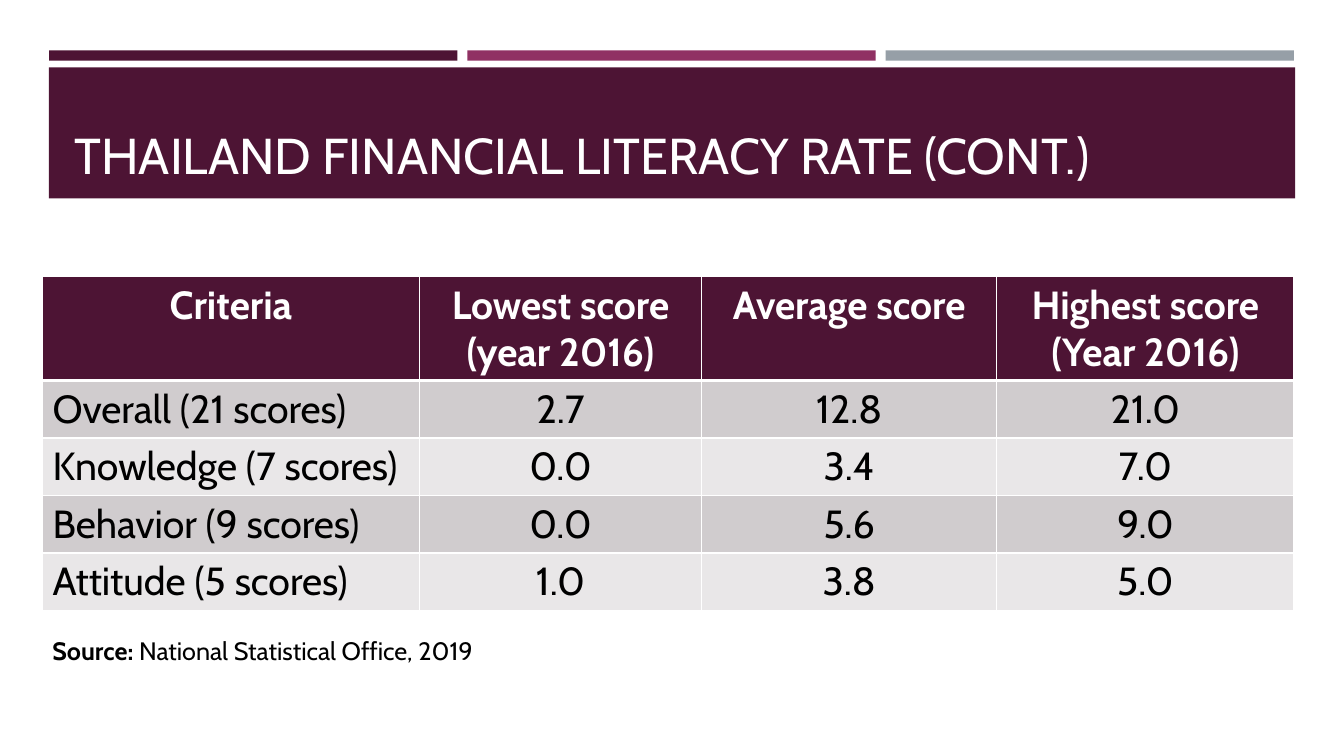
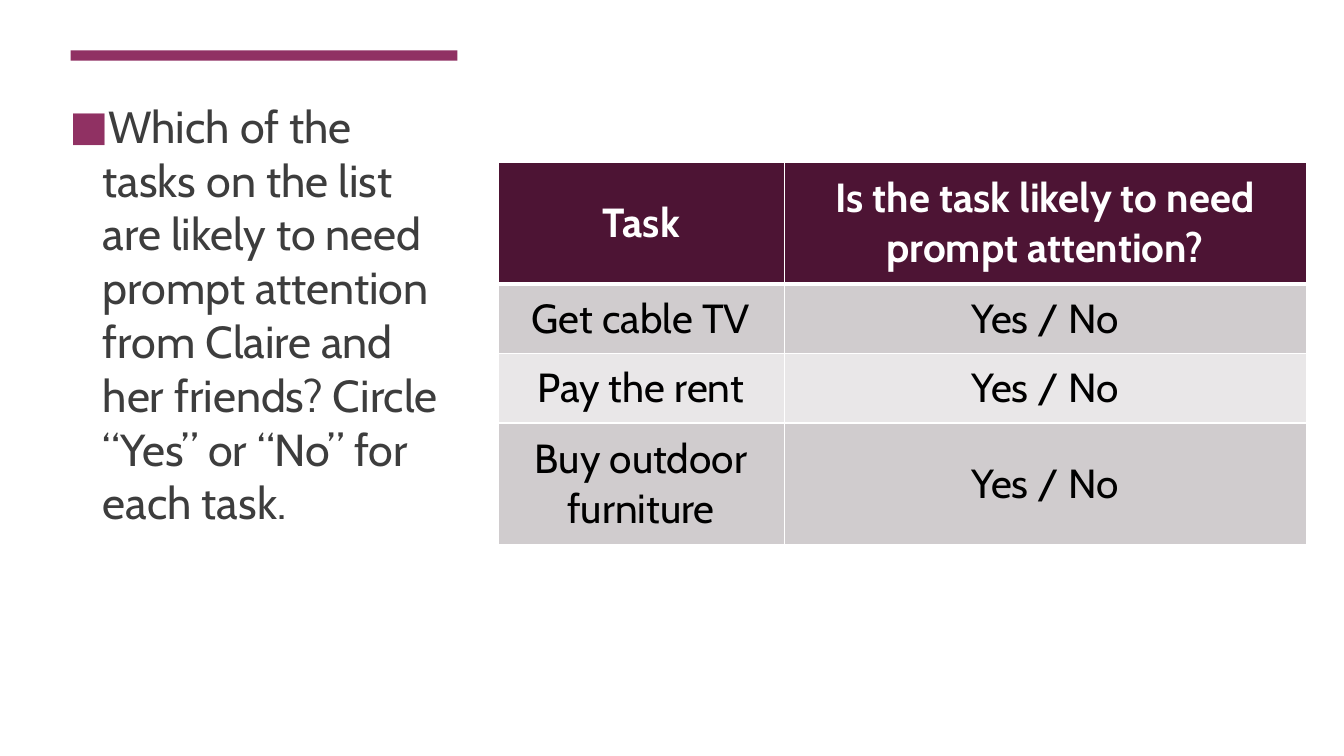
"""Build two slides with score and task tables on financial literacy."""
from lxml import etree
from pptx import Presentation
from pptx import util as u
from pptx.dml.color import RGBColor
from pptx.enum import shapes, text
from pptx.oxml.ns import qn

Cm, Pt = u.Cm, u.Pt
FONT = "Cabin"
COLORS = {
    "plum": "4D1434", "magenta": "903163", "gray": "969FA7",
    "white": "FFFFFF", "black": "000000", "body": "3D3D3D",
    "dark_row": "D0CCCE", "light_row": "E9E7E8",
}
CENTER = text.PP_ALIGN.CENTER
TOP, MIDDLE, BOTTOM = text.MSO_ANCHOR.TOP, text.MSO_ANCHOR.MIDDLE, text.MSO_ANCHOR.BOTTOM
BAR_TOP, BAR_H = 1.27, 0.26


def add_run(p, content, size, color, bold=False):
    r = p.add_run()
    r.text = content
    r.font.name, r.font.size, r.font.bold = FONT, Pt(size), bold
    r.font.color.rgb = RGBColor.from_string(COLORS[color])


def add_table(s, left, top, widths, heights, rows, size, anchor, center_first):
    frame = s.shapes.add_table(len(rows), len(widths), Cm(left), Cm(top),
                               Cm(sum(widths)), Cm(sum(heights)))
    tbl = frame.table
    tbl.horz_banding = False
    for col, width in zip(tbl.columns, widths):
        col.width = Cm(width)
    for i, row in enumerate(rows):
        tbl.rows[i].height = Cm(heights[i])
        header = i == 0
        for j, content in enumerate(row):
            cell = tbl.cell(i, j)
            cell.vertical_anchor = anchor
            tcPr = cell._tc.get_or_add_tcPr()
            for side in "LRTB":
                thick = (side == "B" and i == 0) or (side == "T" and i == 1)
                ln = etree.SubElement(tcPr, qn("a:ln" + side), w=str(Pt(3 if thick else 1)))
                fill = etree.SubElement(ln, qn("a:solidFill"))
                etree.SubElement(fill, qn("a:srgbClr"), val=COLORS["white"])
            cell.fill.solid()
            shade = "plum" if header else "dark_row" if i % 2 else "light_row"
            cell.fill.fore_color.rgb = RGBColor.from_string(COLORS[shade])
            tf = cell.text_frame
            for k, line in enumerate(content.split("\n")):
                p = tf.add_paragraph() if k else tf.paragraphs[0]
                if header or j or center_first:
                    p.alignment = CENTER
                add_run(p, line, size, "white" if header else "black", header)


prs = Presentation()
prs.slide_width, prs.slide_height = Cm(33.87), Cm(19.05)
scores, tasks = [prs.slides.add_slide(prs.slide_layouts[6]) for _ in range(2)]

bars = [(scores, 1.24 + 10.54 * i, BAR_TOP, 10.29, BAR_H, color)
        for i, color in enumerate(("plum", "magenta", "gray"))]
bars += [(scores, 1.23, 1.7, 31.41, 3.3, "plum"),
         (tasks, 1.78, BAR_TOP, 9.75, BAR_H, "magenta")]
for s, left, top, width, height, color in bars:
    sp = s.shapes.add_shape(shapes.MSO_SHAPE.RECTANGLE, Cm(left), Cm(top), Cm(width), Cm(height))
    sp.shadow.inherit = False
    sp.fill.solid()
    sp.fill.fore_color.rgb = RGBColor.from_string(COLORS[color])
    sp.line.fill.background()

boxes = [
    (scores, 1.63, 1.96, 30.63, 2.82, BOTTOM,
     [("THAILAND FINANCIAL LITERACY RATE (CONT.)", 36, "white", False)]),
    (scores, 1.07, 15.88, 11.2, 1.02, TOP,
     [("Source: ", 18, "black", True),
      ("National Statistical Office, 2019", 18, "black", False)]),
    (tasks, 1.5, 2.36, 9.91, 14.27, TOP,
     [("Which of the tasks on the list are likely to need prompt attention from "
       "Claire and her friends? Circle “Yes” or “No” for each task.", 32, "body", False)]),
]
for s, left, top, width, height, anchor, runs in boxes:
    sp = s.shapes.add_textbox(Cm(left), Cm(top), Cm(width), Cm(height))
    tf = sp.text_frame
    tf.word_wrap = True
    tf.vertical_anchor = anchor
    p = tf.paragraphs[0]
    if s is tasks:
        pPr = p._p.get_or_add_pPr()
        pPr.set("marL", str(Cm(0.84)))
        pPr.set("indent", str(-Cm(0.84)))
        bullet_color = etree.SubElement(pPr, qn("a:buClr"))
        etree.SubElement(bullet_color, qn("a:srgbClr"), val=COLORS["magenta"])
        etree.SubElement(pPr, qn("a:buSzPct"), val="92000")
        etree.SubElement(pPr, qn("a:buFont"), typeface=FONT)
        etree.SubElement(pPr, qn("a:buChar"), char="■")
    for run in runs:
        add_run(p, *run)

add_table(scores, 1.07, 6.96, [9.5, 7.11, 7.44, 7.49], [2.62] + [1.45] * 4, [
    ("Criteria", "Lowest score (year 2016)", "Average score", "Highest score\n(Year 2016)"),
    ("Overall (21 scores)", "2.7", "12.8", "21.0"),
    ("Knowledge (7 scores)", "0.0", "3.4", "7.0"),
    ("Behavior (9 scores)", "0.0", "5.6", "9.0"),
    ("Attitude (5 scores)", "1.0", "3.8", "5.0"),
], 28, TOP, False)

add_table(tasks, 12.55, 4.09, [7.21, 13.16], [3.07, 1.75, 1.75, 3.07], [
    ("Task", "Is the task likely to need prompt attention?"),
    ("Get cable TV", "Yes / No"),
    ("Pay the rent", "Yes / No"),
    ("Buy outdoor furniture", "Yes / No"),
], 29, MIDDLE, True)

prs.save("out.pptx")
